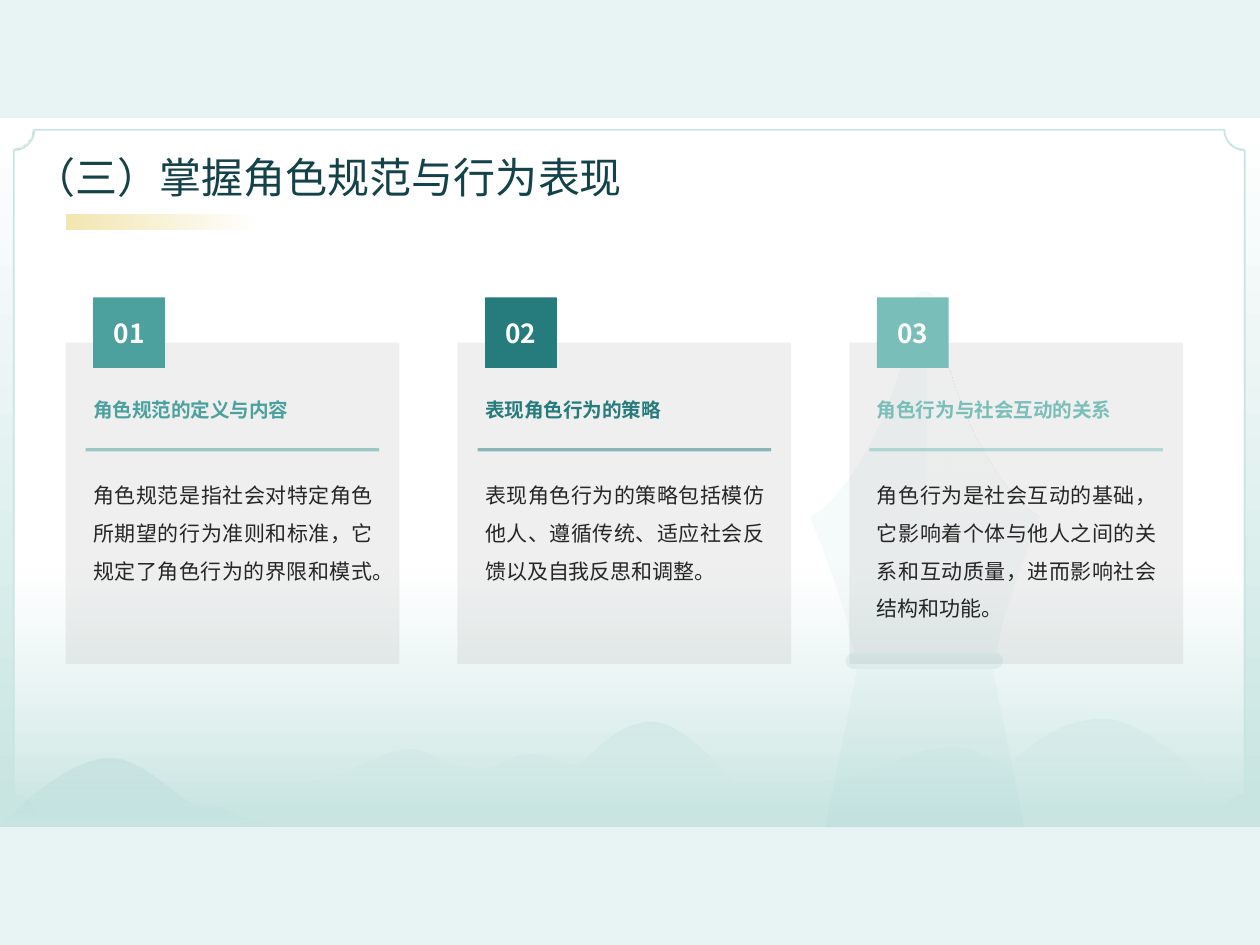
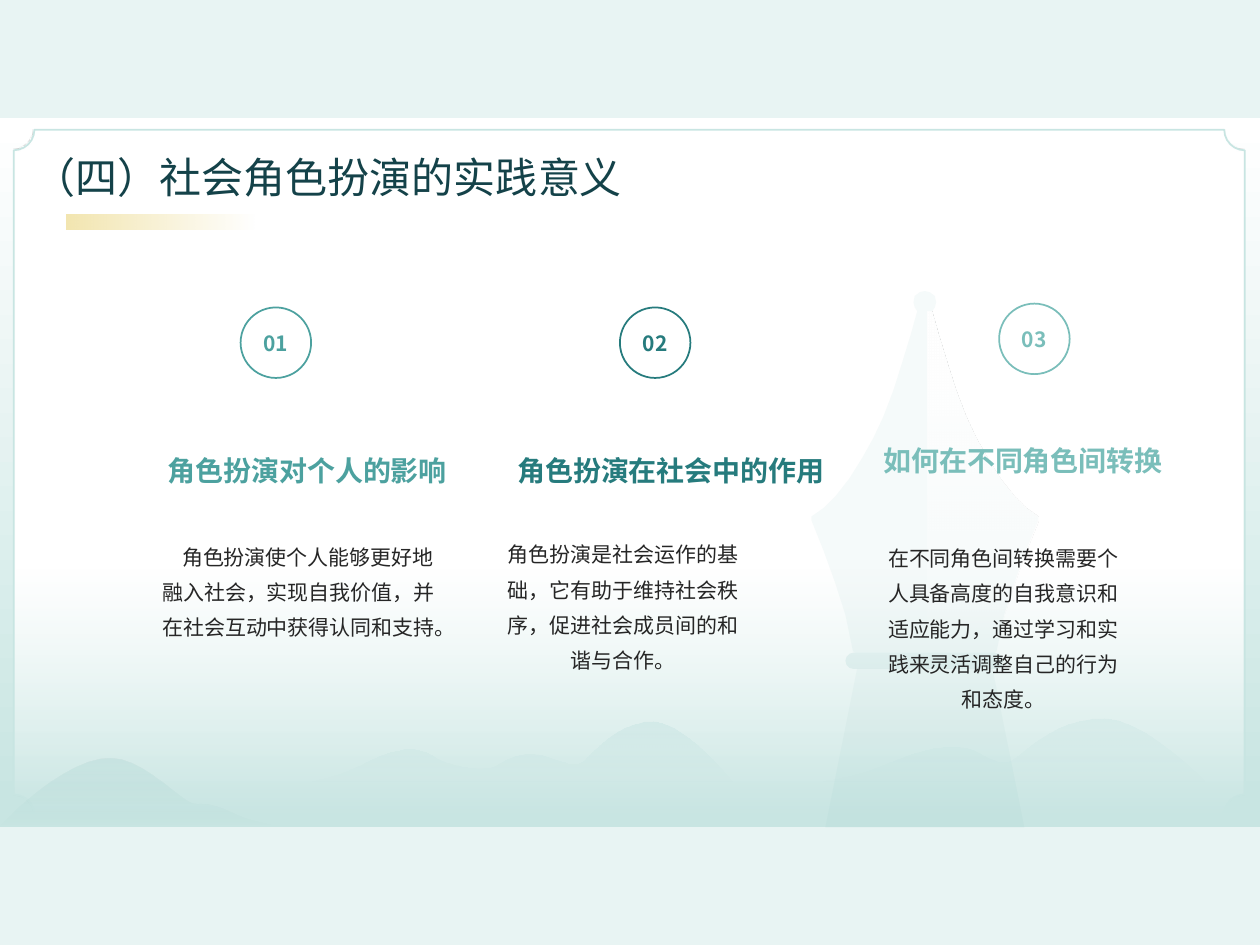
from lxml.etree import SubElement
from pptx import Presentation
from pptx.dml.color import RGBColor
from pptx.enum.shapes import MSO_CONNECTOR, MSO_SHAPE
from pptx.enum.text import MSO_ANCHOR, PP_ALIGN
from pptx.oxml.ns import qn
from pptx.util import Inches, Pt

PALE = RGBColor(0xE8, 0xF4, 0xF3)
MINT = RGBColor(0xC8, 0xE5, 0xE2)
MIST = RGBColor(0xB5, 0xDC, 0xDB)
TEAL = RGBColor(0x4C, 0xA1, 0x9F)
DEEP = RGBColor(0x26, 0x7B, 0x7D)
SOFT = RGBColor(0x7A, 0xBE, 0xBA)
GOLD = RGBColor(0xE6, 0xCC, 0x60)
NAVY = RGBColor(0x14, 0x42, 0x49)
INK = RGBColor(0x26, 0x26, 0x26)
GREY = RGBColor(0x99, 0x99, 0x99)
WHITE = RGBColor(0xFF, 0xFF, 0xFF)
TONES = (TEAL, DEEP, SOFT)
FONT = "Noto Sans CJK SC"
DOWN, LEFT = 270, 180

HILLS = [
    ([(6.44, 6.2), (9.57, 6.2)],
     [(9.57, 6.2), (9.09, 5.7), (8.76, 5.7), (8.42, 5.69), (8.17, 5.92), (8.07, 6),
      (8.01, 6.04), (7.97, 6.08), (7.79, 5.98), (7.62, 5.88), (7.4, 5.9), (7.02, 6.06),
      (6.73, 6.18), (6.44, 6.2), (6.44, 6.2)],
     [(0, MIST, 20), (100, MIST, 0)]),
    ([(2.39, 6.2), (5.81, 6.2)],
     [(5.81, 6.2), (5.44, 5.74), (5.18, 5.73), (4.92, 5.72), (4.73, 5.94), (4.65, 6.01),
      (4.6, 6.06), (4.58, 6.09), (4.33, 6), (4.18, 5.95), (4.04, 6), (3.95, 6.06),
      (3.87, 6.12), (3.58, 6.09), (3.44, 6), (3.3, 5.91), (3.14, 5.92), (2.85, 6.07),
      (2.62, 6.18), (2.39, 6.2), (2.39, 6.2)],
     [(0, MIST, 30), (100, MIST, 0)]),
    ([(0, 6.56), (2.23, 6.56)],
     [(2.23, 6.56), (1.98, 6.51), (1.89, 6.47), (1.8, 6.43), (1.68, 6.37), (1.56, 6.38),
      (1.46, 6.4), (1.16, 6.02), (0.88, 6.02), (0.6, 6.01), (0.2, 6.34), (0, 6.56)],
     [(0, TEAL, 10), (99, TEAL, 0)]),
]
AXIS = 7.34
KNOB = [(7.34, 2.31), (7.38, 2.32), (7.42, 2.35), (7.43, 2.4), (7.42, 2.44)]
EDGE = [(7.4, 2.47), (7.45, 2.65), (7.52, 2.88), (7.59, 3.1), (7.67, 3.31),
        (7.75, 3.48), (7.84, 3.64), (7.94, 3.8), (8.05, 3.94), (8.14, 4.03),
        (8.24, 4.1), (8.24, 4.13), (8.14, 4.38), (8.05, 4.63), (7.97, 4.88),
        (7.91, 5.17), (7.89, 5.18)]

CARDS = [
    ("角色规范的定义与内容",
     "角色规范是指社会对特定角色所期望的行为准则和标准，它规定了角色行为的界限和模式。"),
    ("表现角色行为的策略",
     "表现角色行为的策略包括模仿他人、遵循传统、适应社会反馈以及自我反思和调整。"),
    ("角色行为与社会互动的关系",
     "角色行为是社会互动的基础，它影响着个体与他人之间的关系和互动质量，进而影响社会结构和功能。"),
]
POINTS = [
    (2.44, (1.27, 3.52, 2.34, 0.43), "角色扮演对个人的影响",
     (1.27, 4.24, 2.2, 1.7), 0.15,
     "角色扮演使个人能够更好地融入社会，实现自我价值，并在社会互动中获得认同和支持。"),
    (2.44, (3.98, 3.52, 2.69, 0.43), "角色扮演在社会中的作用",
     (3.98, 4.22, 1.93, 1.39), 0,
     "角色扮演是社会运作的基础，它有助于维持社会秩序，促进社会成员间的和谐与合作。"),
    (2.41, (6.9, 3.44, 2.44, 0.43), "如何在不同角色间转换",
     (7, 4.25, 1.93, 1.39), 0,
     "在不同角色间转换需要个人具备高度的自我意识和适应能力，通过学习和实践来灵活调整自己的行为和态度。"),
]


def curve(start, marks, steps=10):
    """Return points along a chain of cubic curves."""
    dots = []
    for i in range(0, len(marks), 3):
        a, b, c = marks[i:i + 3]
        for k in range(1, steps + 1):
            t = k / steps
            u = 1 - t
            dots.append(tuple(u**3 * p + 3 * u * u * t * q + 3 * u * t * t * r + t**3 * s
                              for p, q, r, s in zip(start, a, b, c)))
        start = c
    return dots


def fade(shape, rates):
    """Set the opacity of each colour in turn, in percent."""
    tints = list(shape.element.spPr.iter(qn("a:srgbClr")))
    for tint, rate in zip(tints, rates):
        if rate < 100:
            SubElement(tint, qn("a:alpha")).set("val", str(rate * 1000))


class Deck:
    """Holds the style and the current slide."""

    def __init__(self):
        """Open an empty deck."""
        self.prs = Presentation()
        self.prs.slide_width, self.prs.slide_height = Inches(10), Inches(7.5)

    def paint(self, shape, fill, angle=DOWN, line=None):
        """Fill with one (colour, opacity) or a list of two stops."""
        shape.shadow.inherit = False
        if isinstance(fill, list):
            shape.fill.gradient()
            shape.fill.gradient_angle = angle
            for stop, (place, tone, rate) in zip(shape.fill.gradient_stops, fill):
                stop.position, stop.color.rgb = place / 100, tone
            fade(shape, [rate for place, tone, rate in fill])
        else:
            shape.fill.solid()
            shape.fill.fore_color.rgb = fill[0]
            fade(shape, fill[1:])
        if line is None:
            shape.line.fill.background()
        else:
            shape.line.color.rgb, shape.line.width = line, Pt(1)
        return shape

    def shape(self, kind, box, fill, angle=DOWN, line=None, adj=None):
        """Add a preset shape."""
        item = self.slide.shapes.add_shape(kind, *map(Inches, box))
        if adj is not None:
            item.adjustments[0] = adj
        return self.paint(item, fill, angle, line)

    def free(self, dots, fill):
        """Add a closed outline."""
        dots = [(Inches(x), Inches(y)) for x, y in dots]
        pen = self.slide.shapes.build_freeform(*dots[0])
        pen.add_line_segments(dots[1:], close=True)
        return self.paint(pen.convert_to_shape(), fill)

    def label(self, item, words, size, tone, bold=False, wrap=True,
              anchor=MSO_ANCHOR.MIDDLE, align=PP_ALIGN.LEFT, space=None, indent=0):
        """Put one styled paragraph in a shape."""
        frame = item.text_frame
        para = frame.paragraphs[0]
        run = para.add_run()
        run.text = words
        looks = [
            (frame, dict(margin_left=0, margin_right=0, margin_top=0, margin_bottom=0,
                         word_wrap=wrap, vertical_anchor=anchor)),
            (para, dict(alignment=align, line_spacing=space)),
            (run.font, dict(name=FONT, size=Pt(size), bold=bold)),
        ]
        for part, look in looks:
            for key, value in look.items():
                setattr(part, key, value)
        run.font.color.rgb = tone
        SubElement(run._r.get_or_add_rPr(), qn("a:ea")).set("typeface", FONT)
        if indent:
            para._p.get_or_add_pPr().set("indent", str(Inches(indent)))

    def text(self, box, words, size, tone, **look):
        """Add a text box."""
        item = self.slide.shapes.add_textbox(*map(Inches, box))
        self.label(item, words, size, tone, **look)

    def rule(self, x, y, width, tone):
        """Add a half clear level line."""
        item = self.slide.shapes.add_connector(
            MSO_CONNECTOR.STRAIGHT, *map(Inches, (x, y, x + width, y)))
        item.line.color.rgb, item.line.width = tone, Pt(1.75)
        fade(item, [50])
        SubElement(item.element.spPr, qn("a:effectLst"))

    def page(self, title):
        """Start a slide with its backdrop and title."""
        self.slide = self.prs.slides.add_slide(self.prs.slide_layouts[6])
        back = self.slide.background.fill
        back.solid()
        back.fore_color.rgb = PALE
        self.shape(MSO_SHAPE.RECTANGLE, (0, 0.94, 10, 5.62),
                   [(0, WHITE, 100), (97, MINT, 100)])
        self.shape(MSO_SHAPE.PLAQUE, (0.11, 1.03, 9.77, 5.44),
                   [(64, WHITE, 100), (100, WHITE, 0)], line=MINT, adj=0.03)
        self.shape(MSO_SHAPE.RECTANGLE, (0.53, 1.7, 1.5, 0.12),
                   [(0, GOLD, 0), (100, GOLD, 50)], LEFT)
        for base, marks, fill in HILLS:
            self.free(base + curve(base[-1], marks), fill)
        self.tower()
        self.text((0.27, 1.16, 6.64, 0.44), title, 24, NAVY, anchor=MSO_ANCHOR.BOTTOM)

    def tower(self):
        """Draw the pale tower at the right."""
        half = KNOB + EDGE
        self.free(half + [(2 * AXIS - x, y) for x, y in reversed(half[1:])], (TEAL, 5))
        self.free([(7.36, 2.47)] + EDGE + [(7.36, 5.18)],
                  [(14, WHITE, 100), (97, WHITE, 0)])
        self.shape(MSO_SHAPE.TRAPEZOID, (6.55, 5.31, 1.58, 1.26), (TEAL, 4), adj=0.2)
        self.shape(MSO_SHAPE.ROUNDED_RECTANGLE, (6.71, 5.18, 1.25, 0.13),
                   (TEAL, 10), adj=0.5)

    def badge(self, kind, box, num, size, fill, tone, line=None):
        """Add a numbered mark."""
        item = self.shape(kind, box, (fill,), line=line)
        self.label(item, f"{num:02}", size, tone, bold=True, wrap=False,
                   align=PP_ALIGN.CENTER)

    def card(self, num, tone, head, body):
        """Add a grey card with mark, heading, rule and body."""
        x = 0.52 + 3.11 * (num - 1)
        inner = x + 0.22
        self.shape(MSO_SHAPE.RECTANGLE, (x, 2.72, 2.65, 2.55), (GREY, 15))
        self.text((inner, 3.73, 2.22, 1.32), body, 12, INK, anchor=MSO_ANCHOR.TOP,
                  align=PP_ALIGN.JUSTIFY, space=1.5)
        self.badge(MSO_SHAPE.RECTANGLE, (inner, 2.36, 0.57, 0.56), num, 15, tone, WHITE)
        self.text((inner, 3.07, 2.22, 0.36), head, 11.2, tone, bold=True)
        self.rule(x + 0.16, 3.57, 2.33, tone)

    def point(self, num, tone, top, spot, head, box, indent, body):
        """Add a ringed number with heading and body."""
        x = 1.91 + 3.01 * (num - 1)
        self.badge(MSO_SHAPE.OVAL, (x, top, 0.56, 0.56), num, 12, WHITE, tone, tone)
        self.text(spot, head, 16, tone, bold=True, align=PP_ALIGN.CENTER)
        self.text(box, body, 12, INK, anchor=MSO_ANCHOR.TOP, align=PP_ALIGN.CENTER,
                  space=1.4, indent=indent)


def main():
    """Build both slides."""
    deck = Deck()
    for title, draw, rows in (("（三）掌握角色规范与行为表现", deck.card, CARDS),
                              ("（四）社会角色扮演的实践意义", deck.point, POINTS)):
        deck.page(title)
        for num, (tone, row) in enumerate(zip(TONES, rows), 1):
            draw(num, tone, *row)
    deck.prs.save("out.pptx")


if __name__ == "__main__":
    main()
